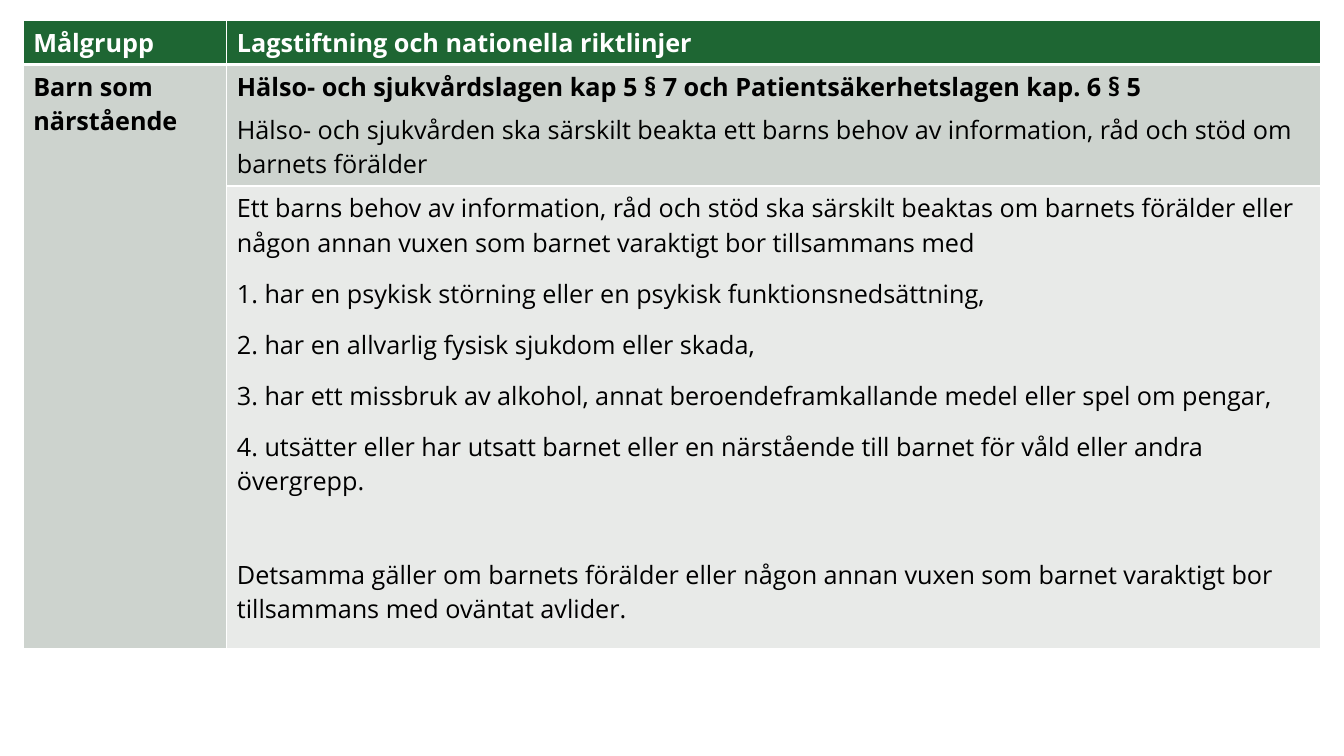
from dataclasses import dataclass

from lxml.etree import SubElement
from pptx import Presentation
from pptx.dml.color import RGBColor as RGB
from pptx.oxml.ns import qn
from pptx.table import _Cell as Cell
from pptx.util import Inches, Pt

COLORS = {
    "white": "FFFFFF",
    "black": "000000",
    "header": "1E6633",
    "band": "CDD3CE",
    "light": "E8EAE8",
}
FONT = "Open Sans"
COLUMN_WIDTHS = (2.02, 10.85)
ROW_HEIGHTS = (0.36, 0.97, 4.59)


@dataclass(frozen=True)
class Para:
    text: str
    bold: bool = False
    before: float = 0
    after: float = 0


@dataclass(frozen=True)
class CellSpec:
    row: int
    col: int
    fill: str
    paras: tuple[Para, ...]
    color: str = "black"


CELLS = (
    CellSpec(0, 0, "header", (Para("Målgrupp", bold=True),), "white"),
    CellSpec(0, 1, "header",
             (Para("Lagstiftning och nationella riktlinjer", bold=True),), "white"),
    CellSpec(1, 0, "band", (Para("Barn som närstående", bold=True),)),
    CellSpec(1, 1, "band", (
        Para("Hälso- och sjukvårdslagen kap 5 § 7 och Patientsäkerhetslagen kap. 6 § 5",
             bold=True, after=6),
        Para("Hälso- och sjukvården ska särskilt beakta ett barns behov av information, "
             "råd och stöd om barnets förälder", after=6),
    )),
    CellSpec(2, 1, "light", (
        Para("Ett barns behov av information, råd och stöd ska särskilt beaktas om barnets "
             "förälder eller någon annan vuxen som barnet varaktigt bor tillsammans med",
             after=12),
        Para("1. har en psykisk störning eller en psykisk funktionsnedsättning,", after=12),
        Para("2. har en allvarlig fysisk sjukdom eller skada,", after=12),
        Para("3. har ett missbruk av alkohol, annat beroendeframkallande medel eller spel "
             "om pengar,", after=12),
        Para("4. utsätter eller har utsatt barnet eller en närstående till barnet för våld "
             "eller andra övergrepp.", after=12),
        Para("Detsamma gäller om barnets förälder eller någon annan vuxen som barnet "
             "varaktigt bor tillsammans med oväntat avlider.", before=30.5, after=6),
    )),
)


def add_text(p, text: str, *, color: str, bold: bool = False, size: float = 18,
             before: float = 0, after: float = 0) -> None:
    p.space_before, p.space_after = Pt(before), Pt(after)
    r = p.add_run()
    r.text = text
    r.font.name, r.font.size, r.font.bold = FONT, Pt(size), bold
    r.font.color.rgb = RGB.from_string(COLORS[color])


def set_borders(cell: Cell, top: float, bottom: float) -> None:
    tc_pr = cell._tc.get_or_add_tcPr()
    for side, width in (("L", 1), ("R", 1), ("T", top), ("B", bottom)):
        ln = SubElement(tc_pr, qn(f"a:ln{side}"), w=str(Pt(width)))
        fill = SubElement(ln, qn("a:solidFill"))
        SubElement(fill, qn("a:srgbClr"), val=COLORS["white"])


def fill_cell(cell: Cell, spec: CellSpec) -> None:
    cell.fill.solid()
    cell.fill.fore_color.rgb = RGB.from_string(COLORS[spec.fill])
    tf = cell.text_frame
    for i, para in enumerate(spec.paras):
        p = tf.add_paragraph() if i else tf.paragraphs[0]
        add_text(p, para.text, color=spec.color, bold=para.bold,
                 before=para.before, after=para.after)


def main() -> None:
    prs = Presentation()
    prs.slide_width, prs.slide_height = Inches(13.33), Inches(7.5)
    s = prs.slides.add_slide(prs.slide_layouts[6])
    table = s.shapes.add_table(
        len(ROW_HEIGHTS), len(COLUMN_WIDTHS), Inches(0.23), Inches(0.2),
        Inches(sum(COLUMN_WIDTHS)), Inches(sum(ROW_HEIGHTS))).table
    for column, width in zip(table.columns, COLUMN_WIDTHS):
        column.width = Inches(width)
    for i, (row, height) in enumerate(zip(table.rows, ROW_HEIGHTS)):
        row.height = Inches(height)
        for cell in row.cells:
            set_borders(cell, top=3 if i == 1 else 1, bottom=3 if i == 0 else 1)
    table.cell(1, 0).merge(table.cell(2, 0))
    for spec in CELLS:
        fill_cell(table.cell(spec.row, spec.col), spec)
    prs.save("out.pptx")


if __name__ == "__main__":
    main()
